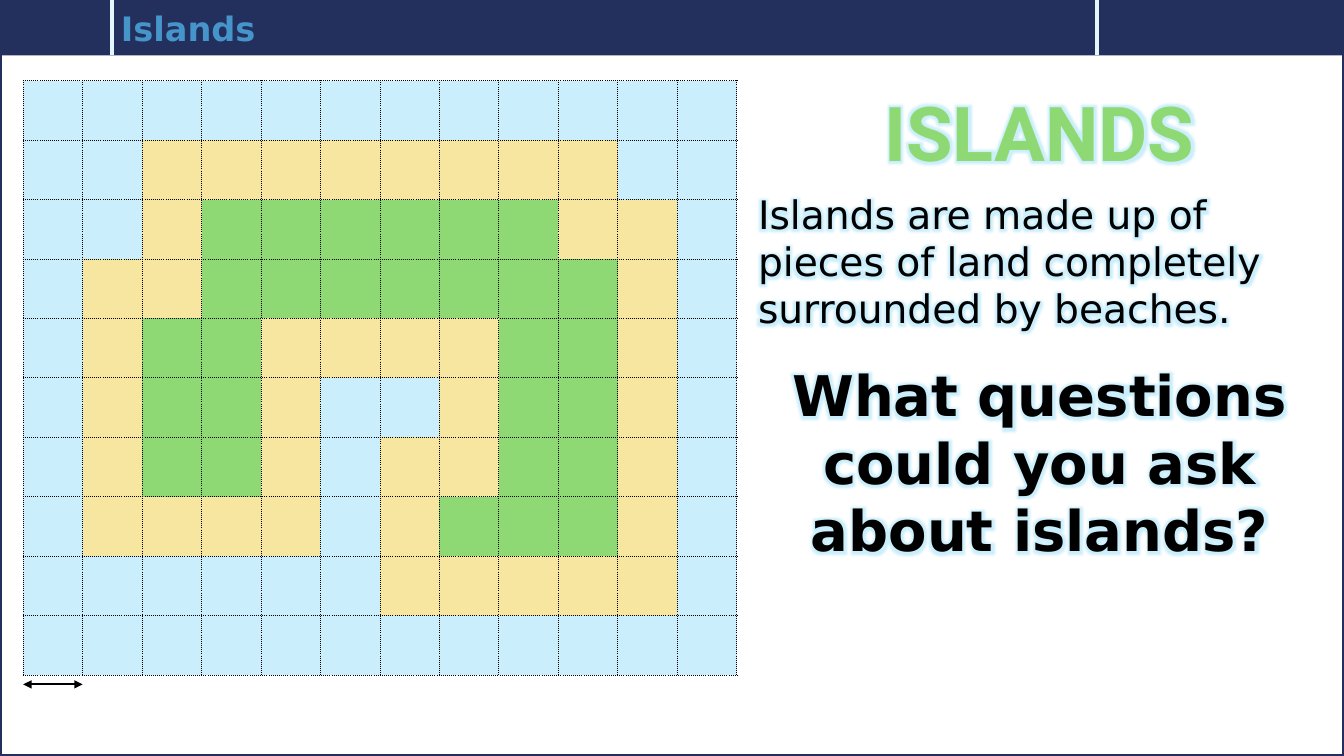
from lxml.etree import SubElement as Sub
from pptx import Presentation
from pptx.dml.color import RGBColor
from pptx.enum.shapes import MSO_CONNECTOR as Link, MSO_SHAPE as Kind
from pptx.enum.text import MSO_ANCHOR as Anchor, MSO_AUTO_SIZE as Fit, PP_ALIGN as Align
from pptx.oxml import parse_xml
from pptx.oxml.ns import nsdecls, qn
from pptx.util import Inches, Pt

NAVY = RGBColor(0x23, 0x2F, 0x5D)
PALE = RGBColor(0xE3, 0xF7, 0xFF)
BLUE = RGBColor(0x46, 0x95, 0xCA)
SEA = RGBColor(0xCA, 0xEE, 0xFB)
SAND = RGBColor(0xF6, 0xE6, 0xA0)
LAND = RGBColor(0x8E, 0xD9, 0x73)
BLACK = RGBColor(0, 0, 0)

WIDE, HIGH = 13.33, 7.5
BAR = 0.55
CELL = 0.59
LEFT, TOP = 0.23, 0.8
SANS = "DejaVu Sans"
FILLS = {"~": SEA, "s": SAND, "L": LAND}
MAP = """
~~~~~~~~~~~~
~~ssssssss~~
~~sLLLLLLss~
~ssLLLLLLLs~
~sLLssssLLs~
~sLLs~~sLLs~
~sLLs~ssLLs~
~ssss~sLLLs~
~~~~~~sssss~
~~~~~~~~~~~~
""".split()


def add_rect(slide, top, high, fill=None, line=None):
    rect = slide.shapes.add_shape(
        Kind.RECTANGLE, 0, Inches(top), Inches(WIDE), Inches(high))
    rect.shadow.inherit = False
    if fill is None:
        rect.fill.background()
    else:
        rect.fill.solid()
        rect.fill.fore_color.rgb = fill
    if line is None:
        rect.line.fill.background()
    else:
        rect.line.color.rgb = line
        rect.line.width = Pt(3)


def add_line(slide, start, end, color, width, arrows=False):
    line = slide.shapes.add_connector(
        Link.STRAIGHT, *[Inches(n) for n in (*start, *end)])
    line.line.color.rgb = color
    line.line.width = Pt(width)
    if arrows:
        ends = line.line._get_or_add_ln()
        for tag in ("a:headEnd", "a:tailEnd"):
            Sub(ends, qn(tag), type="triangle")
    Sub(line._element.spPr, qn("a:effectLst"))


def add_box(slide, left, top, wide, high):
    box = slide.shapes.add_textbox(*[Inches(n) for n in (left, top, wide, high)])
    frame = box.text_frame
    frame.word_wrap = True
    return frame


def set_text(para, text, size, color, bold=False, face=SANS, align=Align.LEFT):
    run = para.add_run()
    run.text = text
    para.alignment = align
    font = para.font
    font.name, font.size, font.bold = face, Pt(size), bold
    font.color.rgb = color
    return run


def add_glow(run):
    run._r.get_or_add_rPr().append(parse_xml(
        f'<a:effectLst {nsdecls("a")}><a:glow rad="{Pt(8)}">'
        f'<a:srgbClr val="{SEA}"/></a:glow></a:effectLst>'))


def add_edge(run):
    run._r.get_or_add_rPr().insert(0, parse_xml(
        f'<a:ln {nsdecls("a")} w="{Pt(3)}"><a:solidFill>'
        f'<a:srgbClr val="{SAND}"/></a:solidFill></a:ln>'))


def set_cell(cell, fill):
    cell.fill.solid()
    cell.fill.fore_color.rgb = fill
    props = cell._tc.get_or_add_tcPr()
    for spot, side in enumerate("LRTB"):
        props.insert(spot, parse_xml(
            f'<a:ln{side} {nsdecls("a")} w="{Pt(0.75)}"><a:solidFill>'
            f'<a:srgbClr val="{BLACK}"/></a:solidFill>'
            f'<a:prstDash val="sysDot"/></a:ln{side}>'))


def add_map(slide):
    rows, cols = len(MAP), len(MAP[0])
    table = slide.shapes.add_table(
        rows, cols, Inches(LEFT), Inches(TOP),
        Inches(cols * CELL), Inches(rows * CELL)).table
    table.first_row = table.horz_banding = False
    for col in table.columns:
        col.width = Inches(CELL)
    for row, marks in zip(table.rows, MAP):
        row.height = Inches(CELL)
        for cell, mark in zip(row.cells, marks):
            set_cell(cell, FILLS[mark])


def add_head(slide):
    add_rect(slide, 0, HIGH, line=NAVY)
    add_rect(slide, 0, BAR, fill=NAVY)
    for left in (1.11, 10.88):
        add_line(slide, (left, 0), (left, BAR), PALE, 3)
    frame = add_box(slide, 1.1, 0, 9.78, BAR)
    frame.vertical_anchor = Anchor.MIDDLE
    set_text(frame.paragraphs[0], "Islands", 24, BLUE, True)


def add_notes(slide):
    frame = add_box(slide, 7.42, TOP, 5.78, 4.88)
    frame.auto_size = Fit.SHAPE_TO_FIT_TEXT
    name = frame.paragraphs[0]
    run = set_text(name, "ISLANDS", 54, LAND, True, "Roboto", Align.CENTER)
    add_edge(run)
    add_glow(run)
    fact = frame.add_paragraph()
    fact.space_before = Pt(10)
    add_glow(set_text(
        fact, "Islands are made up of pieces of land completely "
        "surrounded by beaches.", 28, BLACK))
    ask = frame.add_paragraph()
    ask.space_before = Pt(21)
    add_glow(set_text(
        ask, "What questions could you ask about islands?",
        40, BLACK, True, align=Align.CENTER))


def main():
    deck = Presentation()
    deck.slide_width, deck.slide_height = Inches(WIDE), Inches(HIGH)
    slide = deck.slides.add_slide(deck.slide_layouts[6])
    add_head(slide)
    add_map(slide)
    add_notes(slide)
    base = TOP + len(MAP) * CELL + 0.09
    add_line(slide, (LEFT, base), (LEFT + CELL, base), BLACK, 1.5, True)
    deck.save("out.pptx")


if __name__ == "__main__":
    main()
